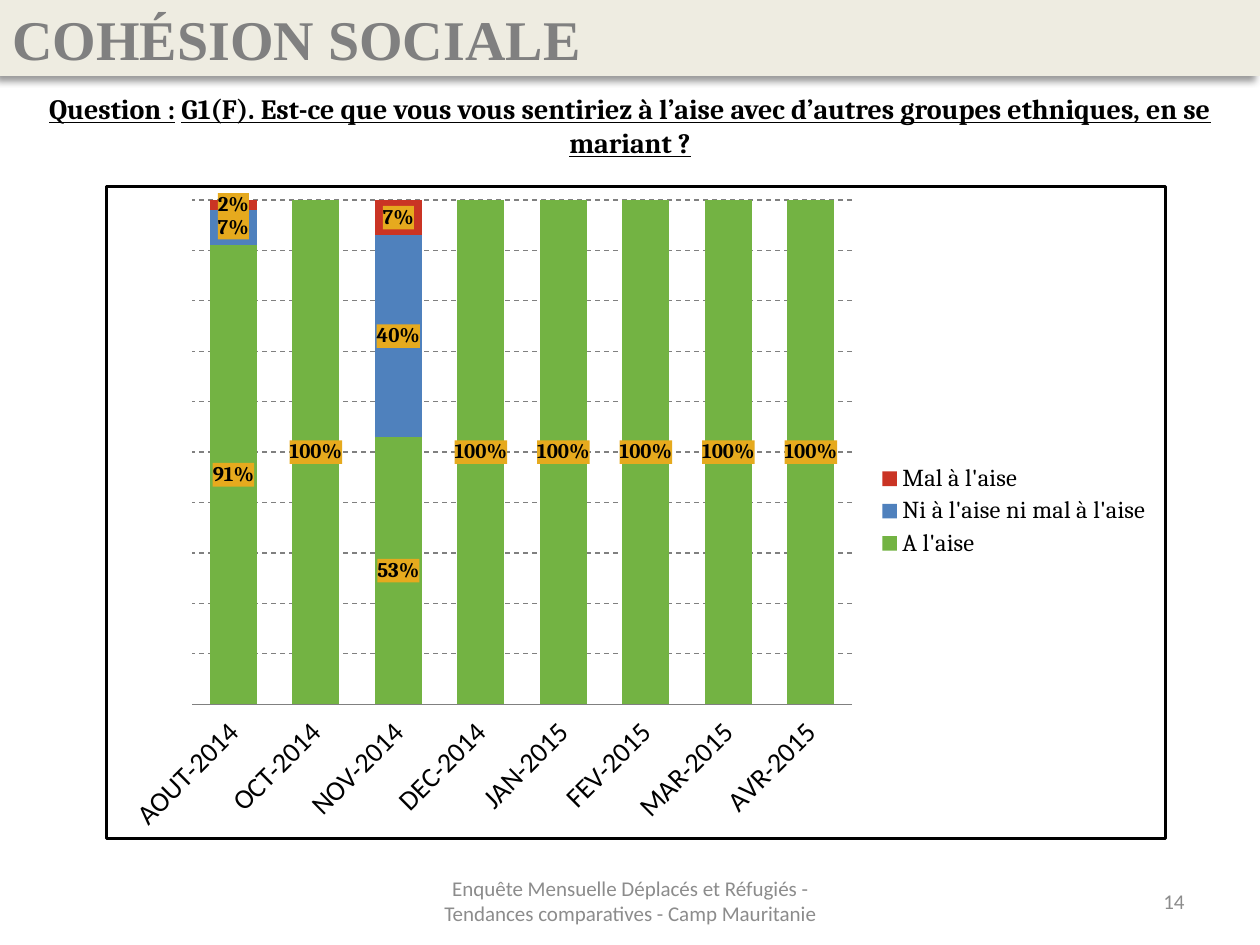
"""Build the social cohesion slide: question, stacked chart by month and footer."""
from lxml import etree
from pptx import Presentation
from pptx.chart.data import CategoryChartData
from pptx.dml.color import RGBColor
from pptx.enum.chart import XL_CHART_TYPE, XL_LEGEND_POSITION, XL_TICK_LABEL_POSITION, XL_TICK_MARK
from pptx.enum.dml import MSO_LINE
from pptx.enum.shapes import MSO_SHAPE
from pptx.enum.text import MSO_ANCHOR, PP_ALIGN
from pptx.oxml import parse_xml
from pptx.util import Emu, Pt

STACKED = XL_CHART_TYPE.COLUMN_STACKED_100
LEFT, CENTER, RIGHT = PP_ALIGN.LEFT, PP_ALIGN.CENTER, PP_ALIGN.RIGHT
NO_TICK = XL_TICK_MARK.NONE
BLACK = RGBColor(0x00, 0x00, 0x00)
GRAY = RGBColor(0x80, 0x80, 0x80)
FOOTER_GRAY = RGBColor(0x8C, 0x8C, 0x8C)
BEIGE = RGBColor(0xEE, 0xEC, 0xE1)
GREEN = RGBColor(0x73, 0xB3, 0x43)
BLUE = RGBColor(0x4F, 0x81, 0xBD)
RED = RGBColor(0xCA, 0x34, 0x24)
AMBER = RGBColor(0xE6, 0xAA, 0x1E)

NS_A = "http://schemas.openxmlformats.org/drawingml/2006/main"
NS_C = "http://schemas.openxmlformats.org/drawingml/2006/chart"
XMLNS = f'xmlns:a="{NS_A}" xmlns:c="{NS_C}"'

TITLE = "COHÉSION SOCIALE"
QUESTION = [
    ("Question :", True),
    (" ", False),
    ("G1(F). Est-ce que vous vous sentiriez à l’aise avec d’autres groupes "
     "ethniques, en se mariant ?", True),
]
FOOTER = "Enquête Mensuelle Déplacés et Réfugiés - Tendances comparatives - Camp Mauritanie"
PAGE = "14"
MONTHS = ["AOUT-2014", "OCT-2014", "NOV-2014", "DEC-2014",
          "JAN-2015", "FEV-2015", "MAR-2015", "AVR-2015"]
ANSWERS = [
    ("A l'aise", GREEN, [0.91, 1, 0.53, 1, 1, 1, 1, 1]),
    ("Ni à l'aise ni mal à l'aise", BLUE, [0.07, 0, 0.4, 0, 0, 0, 0, 0]),
    ("Mal à l'aise", RED, [0.02, 0, 0.07, 0, 0, 0, 0, 0]),
]

SLIDE_SIZE = (1260, 945)
TITLE_BOX = (0, 0, 1260, 76)
QUESTION_BOX = (0, 85, 1260, 81)
CHART_BOX = (105, 185, 1062, 655)
PLOT_BOX = (191, 199, 662, 506)
LEGEND_BOX = (877, 461, 276, 101)
FOOTER_BOX = (431, 876, 399, 50)
PAGE_BOX = (903, 876, 294, 50)


def px(n):
    return Emu(n * 914400 // 126)


def set_font(font, size, name, color, bold=False):
    font.size, font.name, font.bold = Pt(size), name, bold
    font.color.rgb = color


def write(sp, runs, align, *font):
    tf = sp.text_frame
    tf.word_wrap = True
    tf.vertical_anchor = MSO_ANCHOR.MIDDLE
    p = tf.paragraphs[0]
    p.alignment = align
    set_font(p.font, *font)
    for text, underline in runs:
        r = p.add_run()
        r.text = text
        if underline:
            r.font.underline = True


def add_text(s, box, runs, align, *font):
    write(s.shapes.add_textbox(*map(px, box)), runs, align, *font)


def add_title(s):
    sp = s.shapes.add_shape(MSO_SHAPE.RECTANGLE, *map(px, TITLE_BOX))
    sp.fill.solid()
    sp.fill.fore_color.rgb = BEIGE
    sp.line.fill.background()
    sp._element.spPr.append(parse_xml(
        f'<a:effectLst {XMLNS}><a:outerShdw blurRad="50800" dist="50800" dir="8100000">'
        '<a:srgbClr val="000000"><a:alpha val="40000"/></a:srgbClr>'
        '</a:outerShdw></a:effectLst>'))
    write(sp, [(TITLE, False)], LEFT, 32, "Times New Roman", GRAY, True)


def layout(box, target=""):
    x, y, w, h = CHART_BOX
    parts = zip("xywh", ((box[0] - x) / w, (box[1] - y) / h, box[2] / w, box[3] / h))
    values = "".join(f'<c:{k} val="{v:.3f}"/>' for k, v in parts)
    return parse_xml(
        f'<c:layout {XMLNS}><c:manualLayout>{target}<c:xMode val="edge"/>'
        f'<c:yMode val="edge"/>{values}</c:manualLayout></c:layout>')


def place(parent, new, after=None):
    for old in parent.findall(f"{{{NS_C}}}layout"):
        parent.remove(old)
    if after is None:
        parent.insert(0, new)
    else:
        parent.find(f"{{{NS_C}}}{after}").addnext(new)


def style_series(ser, color, values):
    ser.format.fill.solid()
    ser.format.fill.fore_color.rgb = color
    labels = ser.data_labels
    labels.show_value = True
    labels.number_format = "0%"
    labels.number_format_is_linked = False
    set_font(labels.font, 12, "Cambria", BLACK, True)
    el = labels._element
    el.find(f"{{{NS_C}}}txPr").addprevious(parse_xml(
        f'<c:spPr {XMLNS}><a:solidFill><a:srgbClr val="{AMBER}"/></a:solidFill></c:spPr>'))
    empty = [i for i, v in enumerate(values) if v == 0]
    for pos, i in enumerate(empty):
        label = etree.Element(f"{{{NS_C}}}dLbl")
        etree.SubElement(label, f"{{{NS_C}}}idx", val=str(i))
        etree.SubElement(label, f"{{{NS_C}}}delete", val="1")
        el.insert(pos, label)


def add_answers_chart(s):
    data = CategoryChartData(number_format="0%")
    data.categories = MONTHS
    for name, _, values in ANSWERS:
        data.add_series(name, values)
    chart = s.shapes.add_chart(STACKED, *map(px, CHART_BOX), data).chart
    chart.has_title = False
    set_font(chart.font, 10, "Calibri", BLACK)
    plot = chart.plots[0]
    plot.gap_width, plot.overlap, plot.vary_by_categories = 75, 100, False
    for ser, (_, color, values) in zip(plot.series, ANSWERS):
        style_series(ser, color, values)

    cat = chart.category_axis
    cat.major_tick_mark = cat.minor_tick_mark = NO_TICK
    cat.tick_label_position = XL_TICK_LABEL_POSITION.LOW
    cat.format.line.color.rgb = GRAY
    set_font(cat.tick_labels.font, 16, "Calibri", BLACK)
    cat._element.find(f"{{{NS_C}}}txPr/{{{NS_A}}}bodyPr").set("rot", "-2700000")

    val = chart.value_axis
    val.visible = False
    val.minimum_scale, val.maximum_scale, val.major_unit = 0, 1, 0.1
    val.tick_labels.number_format = "0%"
    val.tick_labels.number_format_is_linked = False
    grid = val.major_gridlines.format.line
    grid.color.rgb, grid.width, grid.dash_style = GRAY, Pt(0.75), MSO_LINE.DASH

    chart.has_legend = True
    legend = chart.legend
    legend.position = XL_LEGEND_POSITION.RIGHT
    legend.include_in_layout = False
    set_font(legend.font, 14, "Cambria", BLACK)
    place(legend._element, layout(LEGEND_BOX), "legendPos")
    root = chart._chartSpace
    place(root.find(f".//{{{NS_C}}}plotArea"),
          layout(PLOT_BOX, '<c:layoutTarget val="inner"/>'))
    root.find(f"{{{NS_C}}}txPr").addprevious(parse_xml(
        f'<c:spPr {XMLNS}><a:noFill/><a:ln w="19050"><a:solidFill>'
        f'<a:srgbClr val="{BLACK}"/></a:solidFill></a:ln></c:spPr>'))


def main():
    prs = Presentation()
    prs.slide_width, prs.slide_height = map(px, SLIDE_SIZE)
    s = prs.slides.add_slide(prs.slide_layouts[6])
    add_text(s, PAGE_BOX, [(PAGE, False)], RIGHT, 12, "Calibri", FOOTER_GRAY)
    add_text(s, FOOTER_BOX, [(FOOTER, False)], CENTER, 12, "Calibri", FOOTER_GRAY)
    add_title(s)
    add_text(s, QUESTION_BOX, QUESTION, CENTER, 16, "Cambria", BLACK, True)
    add_answers_chart(s)
    prs.save("out.pptx")


if __name__ == "__main__":
    main()
